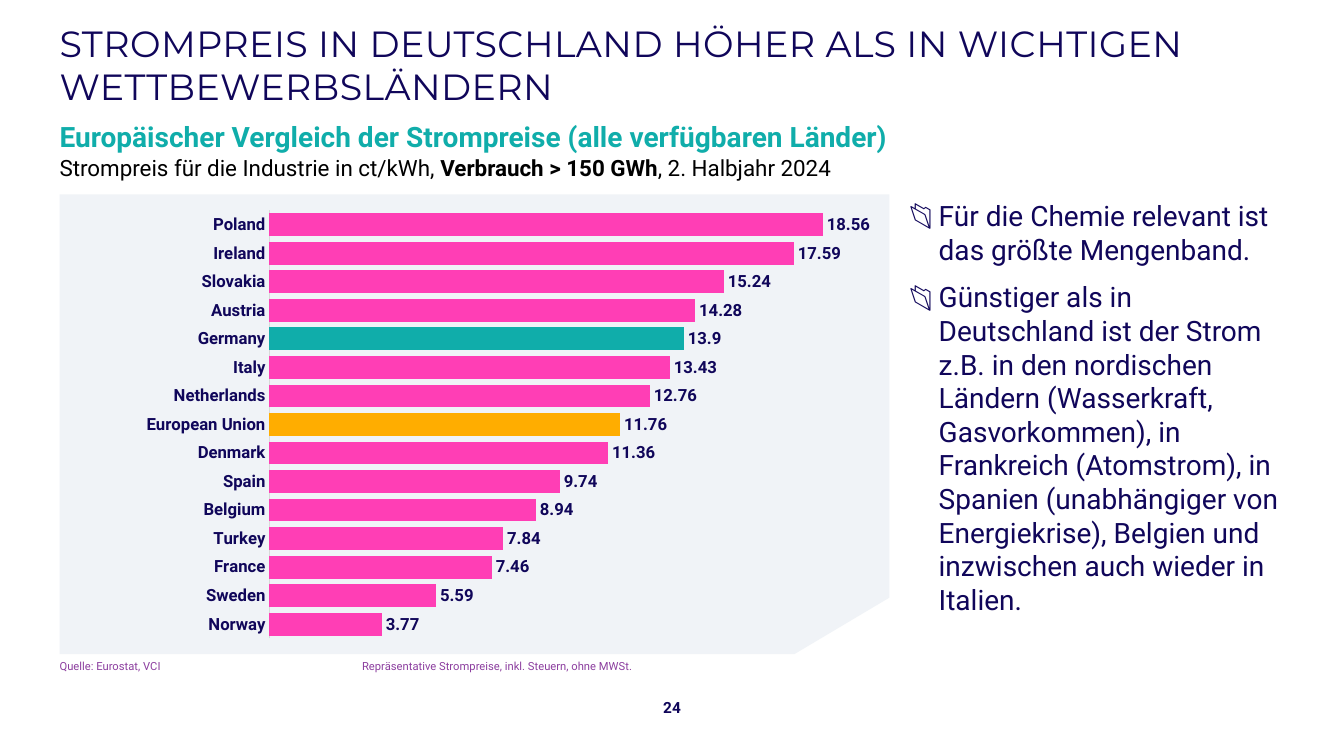
from dataclasses import dataclass

from lxml import etree
from pptx import Presentation
from pptx.chart.data import CategoryChartData
from pptx.dml.color import RGBColor
from pptx.enum.chart import XL_CHART_TYPE, XL_LABEL_POSITION, XL_TICK_MARK
from pptx.enum.text import MSO_ANCHOR, MSO_AUTO_SIZE, PP_ALIGN
from pptx.oxml import parse_xml
from pptx.oxml.ns import nsdecls, qn
from pptx.util import Inches, Pt

BAR_CLUSTERED = XL_CHART_TYPE.BAR_CLUSTERED
OUTSIDE_END = XL_LABEL_POSITION.OUTSIDE_END
NO_TICK = XL_TICK_MARK.NONE
TOP, MIDDLE = MSO_ANCHOR.TOP, MSO_ANCHOR.MIDDLE
LEFT, CENTER = PP_ALIGN.LEFT, PP_ALIGN.CENTER
NO_AUTOFIT = MSO_AUTO_SIZE.NONE

SLIDE_WIDTH = Inches(13.33)
SLIDE_HEIGHT = Inches(7.5)


@dataclass(frozen=True)
class Theme:
    navy: str = "10065A"
    teal: str = "10ADAA"
    pink: str = "FF3EB5"
    orange: str = "FFAD00"
    purple: str = "8C3E9F"
    black: str = "000000"
    panel: str = "F0F3F7"
    axis: str = "D9D9D9"
    title_font: str = "Montserrat"
    text_font: str = "Roboto"
    title_size: float = 26
    body_size: float = 20
    subtitle_size: float = 16
    chart_size: float = 12
    number_size: float = 11
    source_size: float = 8


@dataclass(frozen=True)
class Box:
    left: float
    top: float
    width: float
    height: float


@dataclass(frozen=True)
class TextBlock:
    box: Box
    paragraphs: tuple[tuple[str, ...], ...]
    size: float
    color: str
    font: str = Theme.text_font
    bold_runs: tuple[int, ...] = ()
    anchor: MSO_ANCHOR = TOP
    align: PP_ALIGN = LEFT
    inset: float = 0
    bullet: str = ""
    tab_stop: float = 0
    spacing: int = 0


@dataclass(frozen=True)
class Price:
    country: str
    value: float
    color: str = Theme.pink


THEME = Theme()
MARGIN = 4.43
CONTENT_TOP = 25.73
CONTENT_WIDTH = 91.52
CHART_BOX = Box(5.1, 27.33, 59.64, 57.2)
PANEL_OUTLINE = ((MARGIN, CONTENT_TOP), (66.17, CONTENT_TOP), (66.17, 79.07),
                 (59.11, 86.53), (MARGIN, 86.53))
PLOT_LAYOUT = {"x": 0.252, "y": 0.009, "w": 0.748, "h": 0.991}

TITLE = TextBlock(
    Box(MARGIN, 2, CONTENT_WIDTH, 13.07),
    (("STROMPREIS IN DEUTSCHLAND HÖHER ALS IN WICHTIGEN WETTBEWERBSLÄNDERN",),),
    THEME.title_size, THEME.navy, THEME.title_font, anchor=MIDDLE, inset=0.04, spacing=30)

TEXT_BLOCKS = (
    TextBlock(Box(MARGIN, 15.87, CONTENT_WIDTH, 4.13),
              (("Europäischer Vergleich der Strompreise (alle verfügbaren Länder)",),),
              THEME.body_size, THEME.teal, bold_runs=(0,)),
    TextBlock(Box(MARGIN, 20.4, CONTENT_WIDTH, 3.73),
              (("Strompreis für die Industrie in ct/kWh,", " Verbrauch > 150 GWh",
                ", 2. Halbjahr 2024"),),
              THEME.subtitle_size, THEME.black, bold_runs=(1,)),
    TextBlock(Box(67.67, CONTENT_TOP, 28.36, 58.8),
              (("Für die Chemie relevant ist das größte Mengenband.",),
               ("Günstiger als in Deutschland ist der Strom z.B. in den nordischen Ländern "
                "(Wasserkraft, Gasvorkommen), in Frankreich (Atomstrom), in Spanien "
                "(unabhängiger von Energiekrise), Belgien und inzwischen auch wieder in "
                "Italien.",)),
              THEME.body_size, THEME.navy, inset=0.04, bullet="📂"),
    TextBlock(Box(MARGIN, 87.2, 82.67, 1.73),
              (("Quelle: Eurostat, VCI\tRepräsentative Strompreise, inkl. Steuern, ohne MWSt.",),),
              THEME.source_size, THEME.purple, tab_stop=3),
    TextBlock(Box(47.79, 91.73, 4.43, 3.73), (("24",),),
              THEME.number_size, THEME.navy, bold_runs=(0,), anchor=MIDDLE, align=CENTER),
)

PRICES = (
    Price("Norway", 3.77), Price("Sweden", 5.59), Price("France", 7.46),
    Price("Turkey", 7.84), Price("Belgium", 8.94), Price("Spain", 9.74),
    Price("Denmark", 11.36), Price("European Union", 11.76, THEME.orange),
    Price("Netherlands", 12.76), Price("Italy", 13.43),
    Price("Germany", 13.9, THEME.teal), Price("Austria", 14.28),
    Price("Slovakia", 15.24), Price("Ireland", 17.59), Price("Poland", 18.56),
)


def across(share: float) -> int:
    return round(SLIDE_WIDTH * share / 100)


def down(share: float) -> int:
    return round(SLIDE_HEIGHT * share / 100)


def place(box: Box) -> tuple[int, int, int, int]:
    return across(box.left), down(box.top), across(box.width), down(box.height)


def style_font(font, name: str, size: float, color: str, bold: bool) -> None:
    font.name = name
    font.size = Pt(size)
    font.bold = bold
    font.color.rgb = RGBColor.from_string(color)


def format_paragraph(paragraph, block: TextBlock) -> None:
    properties = paragraph._p.get_or_add_pPr()
    if block.bullet:
        properties.set("marL", str(Inches(0.29)))
        properties.set("indent", str(-Inches(0.29)))
        color = etree.SubElement(properties, qn("a:buClr"))
        etree.SubElement(color, qn("a:srgbClr"), val=block.color)
        etree.SubElement(properties, qn("a:buFont"), typeface=block.font)
        etree.SubElement(properties, qn("a:buChar"), char=block.bullet)
    if block.tab_stop:
        tabs = etree.SubElement(properties, qn("a:tabLst"))
        etree.SubElement(tabs, qn("a:tab"), pos=str(Inches(block.tab_stop)), algn="l")
    paragraph.alignment = block.align


def fill_text(shape, block: TextBlock) -> None:
    shape.left, shape.top, shape.width, shape.height = place(block.box)
    frame = shape.text_frame
    frame.word_wrap = True
    frame.auto_size = NO_AUTOFIT
    frame.vertical_anchor = block.anchor
    frame.margin_left = frame.margin_right = 0
    frame.margin_top = frame.margin_bottom = Inches(block.inset)
    for index, texts in enumerate(block.paragraphs):
        paragraph = frame.add_paragraph() if index else frame.paragraphs[0]
        format_paragraph(paragraph, block)
        if index:
            paragraph.space_before = Pt(10)
        for position, text in enumerate(texts):
            run = paragraph.add_run()
            run.text = text
            style_font(run.font, block.font, block.size, block.color,
                       position in block.bold_runs)
            if block.spacing:
                run._r.get_or_add_rPr().set("spc", str(block.spacing))


def add_panel(slide) -> None:
    start, *corners = [(across(x), down(y)) for x, y in PANEL_OUTLINE]
    builder = slide.shapes.build_freeform(*start)
    builder.add_line_segments(corners, close=True)
    panel = builder.convert_to_shape()
    panel.shadow.inherit = False
    panel.fill.solid()
    panel.fill.fore_color.rgb = RGBColor.from_string(THEME.panel)
    panel.line.fill.background()


def set_plot_layout(chart) -> None:
    plot_area = chart._chartSpace.chart.plotArea
    for layout in plot_area.findall(qn("c:layout")):
        plot_area.remove(layout)
    sizes = "".join(f'<c:{key} val="{value}"/>' for key, value in PLOT_LAYOUT.items())
    plot_area.insert(0, parse_xml(
        f'<c:layout {nsdecls("c")}><c:manualLayout><c:layoutTarget val="inner"/>'
        f'<c:xMode val="edge"/><c:yMode val="edge"/>{sizes}</c:manualLayout></c:layout>'))


def add_price_chart(slide) -> None:
    data = CategoryChartData()
    data.categories = [price.country for price in PRICES]
    data.add_series("Strompreis", [price.value for price in PRICES])
    chart = slide.shapes.add_chart(BAR_CLUSTERED, *place(CHART_BOX), data).chart
    chart.has_legend = chart.has_title = False
    style_font(chart.font, THEME.text_font, THEME.chart_size, THEME.navy, True)
    set_plot_layout(chart)

    value_axis = chart.value_axis
    value_axis.minimum_scale, value_axis.maximum_scale = 0, 20
    value_axis.has_major_gridlines = False
    value_axis.visible = False
    category_axis = chart.category_axis
    category_axis.major_tick_mark = NO_TICK
    category_axis.format.line.width = Pt(0.75)
    category_axis.format.line.color.rgb = RGBColor.from_string(THEME.axis)

    plot = chart.plots[0]
    plot.gap_width = 25
    plot.vary_by_categories = False
    plot.has_data_labels = True
    labels = plot.data_labels
    labels.show_value = True
    labels.position = OUTSIDE_END
    style_font(labels.font, THEME.text_font, THEME.chart_size, THEME.navy, True)
    series = plot.series[0]
    series.format.fill.solid()
    series.format.fill.fore_color.rgb = RGBColor.from_string(THEME.pink)
    for index, price in enumerate(PRICES):
        if price.color != THEME.pink:
            fill = series.points[index].format.fill
            fill.solid()
            fill.fore_color.rgb = RGBColor.from_string(price.color)


def main() -> None:
    presentation = Presentation()
    presentation.slide_width = SLIDE_WIDTH
    presentation.slide_height = SLIDE_HEIGHT
    slide = presentation.slides.add_slide(presentation.slide_layouts.get_by_name("Title Only"))
    add_panel(slide)
    fill_text(slide.shapes.title, TITLE)
    for block in TEXT_BLOCKS:
        fill_text(slide.shapes.add_textbox(*place(block.box)), block)
    add_price_chart(slide)
    presentation.save("out.pptx")


if __name__ == "__main__":
    main()
